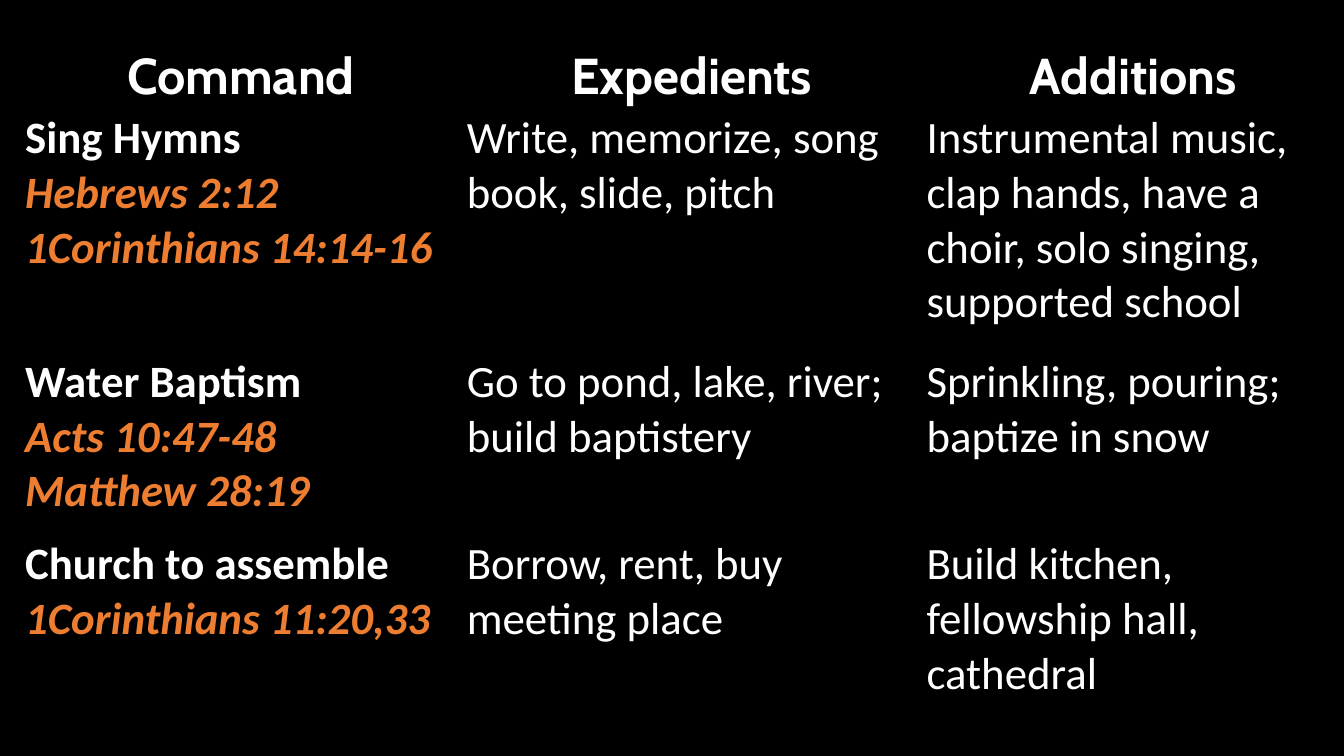
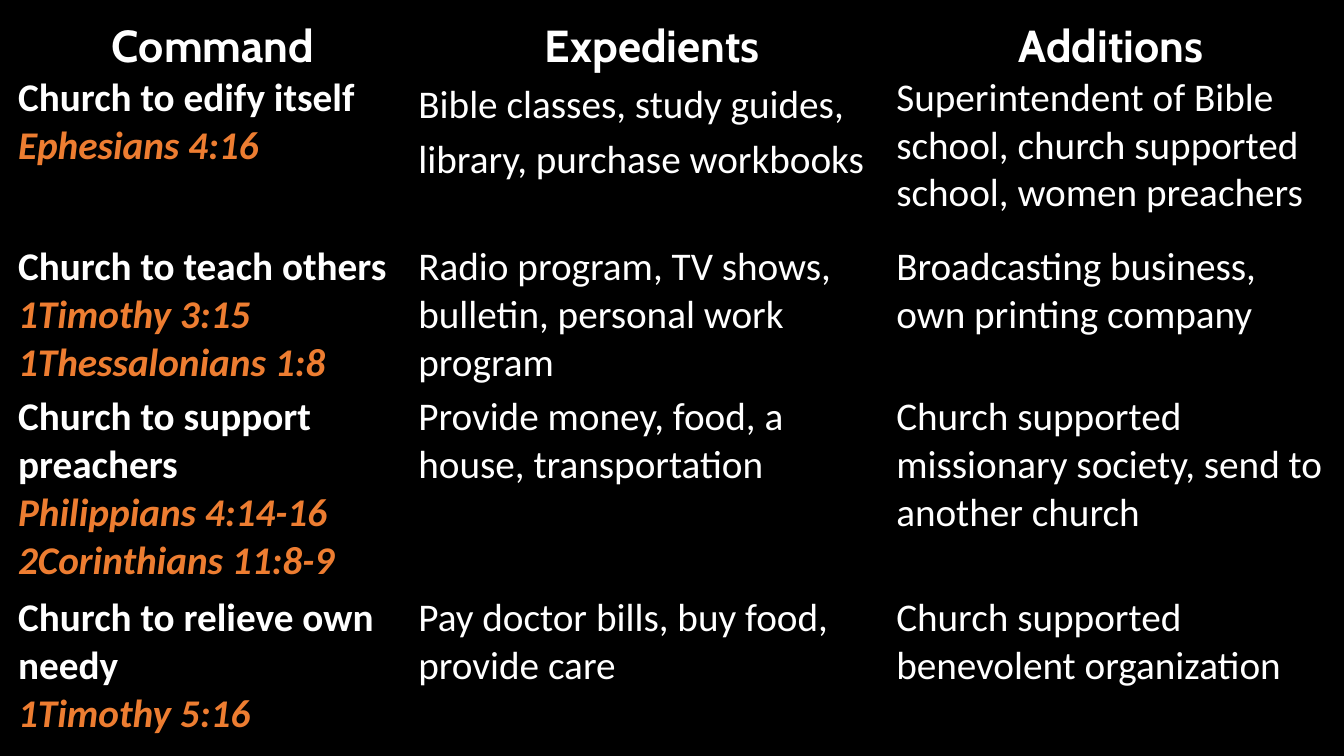
"""Build two table slides comparing commands, expedients and additions."""
from pptx import Presentation
from pptx.dml.color import RGBColor
from pptx.enum.text import PP_ALIGN
from pptx.util import Inches, Pt

CENTER, LEFT = PP_ALIGN.CENTER, PP_ALIGN.LEFT
BLACK = RGBColor(0x00, 0x00, 0x00)
WHITE = RGBColor(0xFF, 0xFF, 0xFF)
ORANGE = RGBColor(0xED, 0x7D, 0x31)
HEAD_FONT, BODY_FONT = "Cabin", "Calibri"
NO_STYLE = "{2D5ABB26-0587-4C30-8999-92F81FD0307C}"
HEADINGS = ("Command", "Expedients", "Additions")

SLIDES = [
    {
        "at": (0.2, 0.36), "cols": (4.38, 4.56, 4.2),
        "heights": (0.74, 2.42, 1.81, 1.81),
        "head_size": 36, "body_size": 32, "loose": (),
        "rows": [
            (("Sing Hymns", "Hebrews 2:12", "1Corinthians 14:14-16"),
             "Write, memorize, song book, slide, pitch",
             "Instrumental music, clap hands, have a choir, solo singing, supported school"),
            (("Water Baptism", "Acts 10:47-48", "Matthew 28:19"),
             "Go to pond, lake, river; build baptistery",
             "Sprinkling, pouring; baptize in snow"),
            (("Church to assemble", "1Corinthians 11:20,33"),
             "Borrow, rent, buy meeting place",
             "Build kitchen, fellowship hall, cathedral"),
        ],
    },
    {
        "at": (0.13, 0.11), "cols": (3.97, 4.74, 4.36),
        "heights": (0.62, 1.68, 1.49, 1.99, 1.49),
        "head_size": 32, "body_size": 28, "loose": ((1, 1),),
        "rows": [
            (("Church to edify itself", "Ephesians 4:16"),
             "Bible classes, study guides, library, purchase workbooks",
             "Superintendent of Bible school, church supported school, women preachers"),
            (("Church to teach others", "1Timothy 3:15", "1Thessalonians 1:8"),
             "Radio program, TV shows, bulletin, personal work program",
             "Broadcasting business, own printing company"),
            (("Church to support preachers", "Philippians 4:14-16", "2Corinthians 11:8-9"),
             "Provide money, food, a house, transportation",
             "Church supported missionary society, send to another church"),
            (("Church to relieve own needy", "1Timothy 5:16"),
             "Pay doctor bills, buy food, provide care",
             "Church supported benevolent organization"),
        ],
    },
]


def fill_cell(cell, lines, size, heading, command, loose):
    """Write a cell; the lines after a command are its references."""
    cell.fill.background()
    cell.margin_left = cell.margin_right = Inches(0.05)
    cell.margin_top = cell.margin_bottom = 0
    cell.text_frame.text = "\n".join(lines)
    for i, p in enumerate(cell.text_frame.paragraphs):
        reference = command and i > 0
        p.alignment = CENTER if heading else LEFT
        if loose:
            p.line_spacing, p.space_after = 1.15, Pt(8)
        font = p.runs[0].font
        font.name = HEAD_FONT if heading else BODY_FONT
        font.size = Pt(size)
        font.bold = heading or command
        font.italic = reference
        font.color.rgb = ORANGE if reference else WHITE


def add_slide(prs, data):
    """Add a black slide with one plain table."""
    s = prs.slides.add_slide(prs.slide_layouts[6])
    s.background.fill.solid()
    s.background.fill.fore_color.rgb = BLACK
    cols, heights = data["cols"], data["heights"]
    left, top = data["at"]
    table = s.shapes.add_table(len(heights), len(cols), Inches(left), Inches(top),
                               Inches(sum(cols)), Inches(sum(heights))).table
    table._tbl.tblPr[0].text = NO_STYLE
    table.first_row = table.horz_banding = False
    for column, width in zip(table.columns, cols):
        column.width = Inches(width)
    for row, height in zip(table.rows, heights):
        row.height = Inches(height)
    for r, texts in enumerate([HEADINGS] + data["rows"]):
        heading = r == 0
        size = data["head_size"] if heading else data["body_size"]
        for c, text in enumerate(texts):
            lines = (text,) if isinstance(text, str) else text
            fill_cell(table.cell(r, c), lines, size, heading,
                      command=c == 0 and not heading,
                      loose=heading or (r, c) in data["loose"])


def main():
    """Build and save the presentation."""
    prs = Presentation()
    prs.slide_width, prs.slide_height = Inches(13.33), Inches(7.5)
    for data in SLIDES:
        add_slide(prs, data)
    prs.save("out.pptx")


if __name__ == "__main__":
    main()
